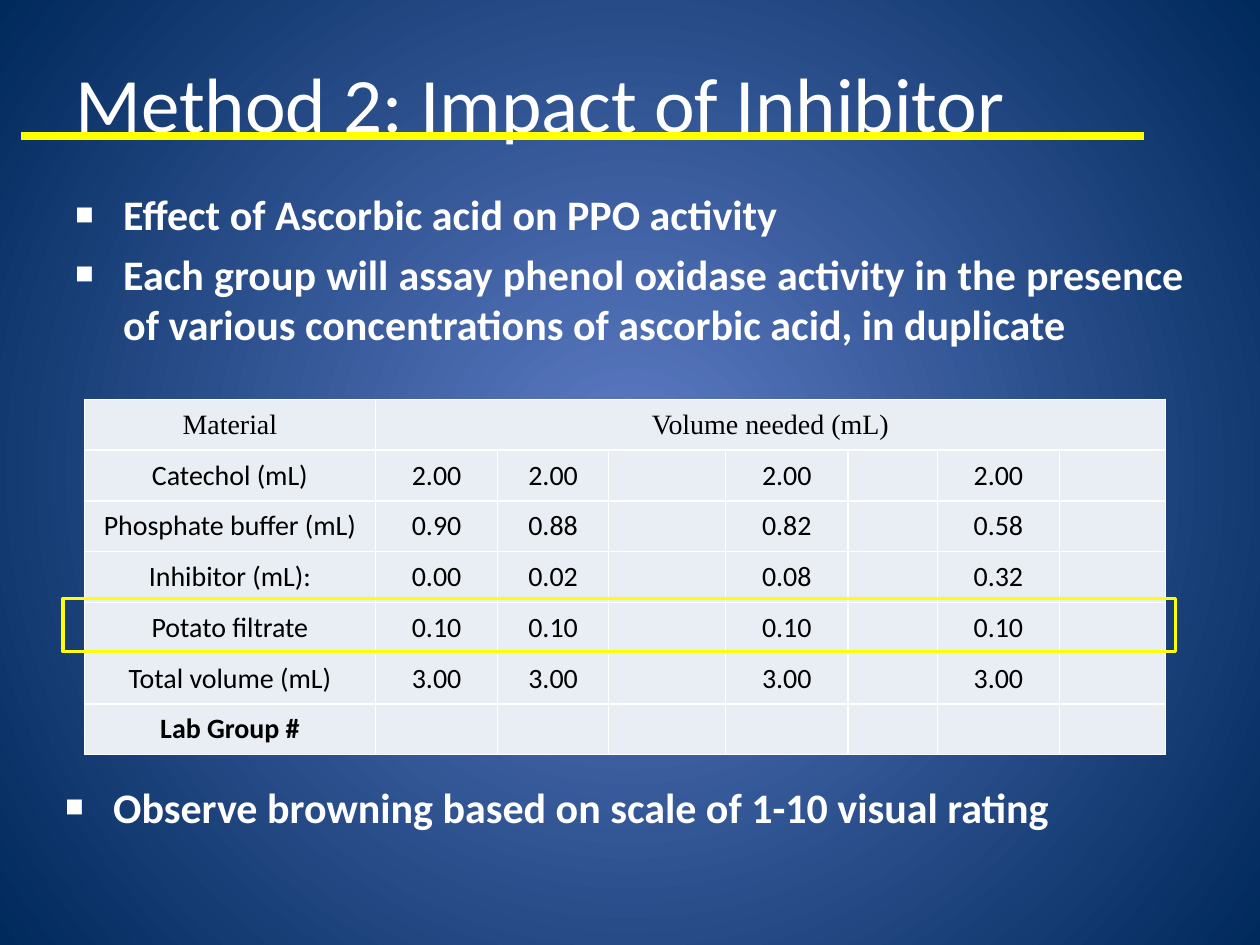
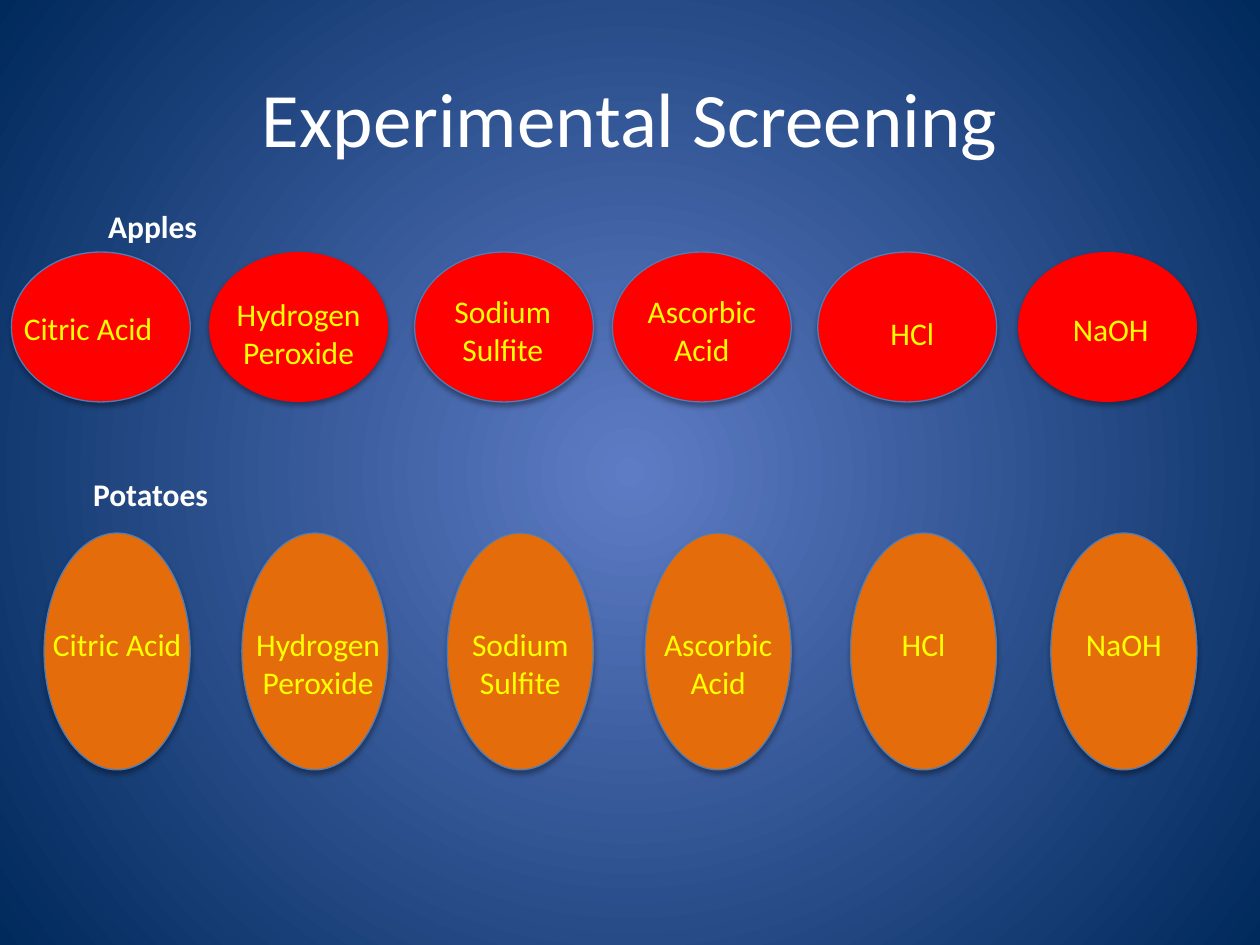
from dataclasses import dataclass

from pptx import Presentation
from pptx.dml.color import RGBColor
from pptx.enum.shapes import MSO_CONNECTOR, MSO_SHAPE
from pptx.enum.text import MSO_ANCHOR, MSO_AUTO_SIZE, PP_ALIGN
from pptx.oxml.ns import qn
from pptx.oxml.xmlchemy import OxmlElement
from pptx.util import Inches, Pt

# Grid: 100 columns by 75 rows of square cells
COLUMNS, ROWS = 100, 75
WIDTH, HEIGHT = Inches(10), Inches(7.5)

# Shared colours and text formats
WHITE, BLACK, YELLOW = "FFFFFF", "000000", "FFFF00"
GLOW, NAVY = "5E7CC5", "00295C"
APPLE_RED, POTATO_ORANGE, OUTLINE_BLUE = "FF0000", "E46C0A", "4B7EBC"
CELL_FILL = "E9EDF4"

TITLE_FONT = {"name": "Calibri", "size": Pt(44)}
BULLET_FONT = {"name": "Calibri", "size": Pt(24), "bold": True}
HEADING_FONT = {"name": "Calibri", "size": Pt(18), "bold": True}
LABEL_FONT = {"name": "Calibri", "size": Pt(18)}
CELL_FONT = {"name": "Calibri", "size": Pt(16)}
HEADER_FONT = {"name": "Times New Roman", "size": Pt(16)}

LEFT_TEXT = {"alignment": PP_ALIGN.LEFT}
CENTRED_TEXT = {"alignment": PP_ALIGN.CENTER}
BULLET_TEXT = {"alignment": PP_ALIGN.JUSTIFY, "level": 1, "space_before": Pt(5)}
TITLE_FRAME = {"word_wrap": True, "vertical_anchor": MSO_ANCHOR.MIDDLE}
BODY_FRAME = {"word_wrap": True, "vertical_anchor": MSO_ANCHOR.TOP}
LABEL_FRAME = BODY_FRAME | {"auto_size": MSO_AUTO_SIZE.SHAPE_TO_FIT_TEXT}
CELL_FORMAT = {"vertical_anchor": MSO_ANCHOR.MIDDLE, "margin_left": 0,
               "margin_right": 0, "margin_top": 0, "margin_bottom": 0}


@dataclass(frozen=True)
class Area:
    """A block of grid cells."""
    column: float
    row: float
    columns: float
    rows: float

    def box(self) -> tuple[int, int, int, int]:
        return across(self.column), down(self.row), across(self.columns), down(self.rows)


@dataclass(frozen=True)
class Treatment:
    """One screened chemical; both of its ovals end at the column `right`."""
    name: str
    right: float
    apple_label_row: float
    apple_nudge: float = 0
    potato_label_columns: float = 11.6
    potato_nudge: float = 0
    apple_outlined: bool = True
    apple_text: PP_ALIGN = PP_ALIGN.CENTER


@dataclass(frozen=True)
class Produce:
    """A row of ovals with its heading."""
    heading: str
    heading_area: Area
    row: float
    columns: float
    rows: float
    fill: str


APPLES = Produce("Apples", Area(7.6, 15.9, 15.1, 4), 20, 14.2, 11.9, APPLE_RED)
POTATOES = Produce("Potatoes", Area(6.4, 37.2, 14.2, 4), 42.3, 11.6, 18.8, POTATO_ORANGE)
POTATO_LABEL_ROW = 49.1
TREATMENTS = [
    Treatment("Citric Acid", 15.1, 24, potato_label_columns=14.5,
              apple_text=PP_ALIGN.LEFT),
    Treatment("Hydrogen Peroxide", 30.8, 22.9, potato_label_columns=15.1,
              potato_nudge=0.25, apple_outlined=False),
    Treatment("Sodium Sulfite", 47.1, 22.7, apple_nudge=-0.1),
    Treatment("Ascorbic Acid", 62.8, 22.7),
    Treatment("HCl", 79.1, 24.4, apple_nudge=0.4),
    Treatment("NaOH", 95, 24.1, apple_nudge=0.25, apple_outlined=False),
]

# Assay mixtures: material, then the control and three inhibitor levels
MIXTURES = [
    ("Catechol (mL)", "2.00", "2.00", "2.00", "2.00"),
    ("Phosphate buffer (mL)", "0.90", "0.88", "0.82", "0.58"),
    ("Inhibitor (mL):", "0.00", "0.02", "0.08", "0.32"),
    ("Potato filtrate", "0.10", "0.10", "0.10", "0.10"),
    ("Total volume (mL)", "3.00", "3.00", "3.00", "3.00"),
    ("Lab Group #", "", "", "", ""),
]
FILLED_COLUMNS = (0, 1, 2, 4, 6)
MIXTURE_COLUMNS = (23.1, 9.7, 8.8, 9.3, 9.7, 7.1, 9.7, 8.4)
MIXTURE_ROW = 4.03


def across(columns: float) -> int:
    return round(WIDTH * columns / COLUMNS)


def down(rows: float) -> int:
    return round(HEIGHT * rows / ROWS)


def colour(code: str) -> RGBColor:
    return RGBColor.from_string(code)


def apply(target, formats: dict) -> None:
    for attribute, value in formats.items():
        setattr(target, attribute, value)


def add_xml(parent, tag: str, **attributes):
    child = OxmlElement(tag)
    for key, value in attributes.items():
        child.set(key, str(value))
    parent.append(child)
    return child


def write(paragraph, text: str, font: dict, ink: str, layout: dict) -> None:
    run = paragraph.add_run()
    run.text = text
    apply(run.font, font)
    run.font.color.rgb = colour(ink)
    apply(paragraph, layout)


def add_text(slide, area: Area, text: str, font: dict, ink: str,
             layout: dict, frame_format: dict) -> None:
    frame = slide.shapes.add_textbox(*area.box()).text_frame
    apply(frame, frame_format)
    write(frame.paragraphs[0], text, font, ink, layout)


def add_bullets(slide, area: Area, points: list[str]) -> None:
    frame = slide.shapes.add_textbox(*area.box()).text_frame
    apply(frame, BODY_FRAME)
    for index, point in enumerate(points):
        paragraph = frame.add_paragraph() if index else frame.paragraphs[0]
        write(paragraph, point, BULLET_FONT, WHITE, BULLET_TEXT)
        properties = paragraph._p.get_or_add_pPr()
        properties.set("marL", str(across(3.8)))
        properties.set("indent", str(-across(3.8)))
        add_xml(add_xml(properties, "a:buClr"), "a:srgbClr", val=WHITE)
        add_xml(properties, "a:buSzPct", val=46000)
        add_xml(properties, "a:buFont", typeface="Calibri")
        add_xml(properties, "a:buChar", char="■")


def add_titled_slide(deck, title: str, row: float, layout: dict):
    """Blank slide with the round glow behind it and the title on top."""
    slide = deck.slides.add_slide(deck.slide_layouts[6])
    fill = slide.background.fill
    fill.gradient()
    for stop, code, position in zip(fill.gradient_stops, (GLOW, NAVY), (0, 1)):
        stop.color.rgb = colour(code)
        stop.position = position
    gradient = slide.element.find(".//" + qn("a:gradFill"))
    gradient.remove(gradient.find(qn("a:lin")))
    centre = dict.fromkeys("ltrb", 50000)
    add_xml(add_xml(gradient, "a:path", path="circle"), "a:fillToRect", **centre)
    add_text(slide, Area(5, row, 90, 12.5), title, TITLE_FONT, WHITE, layout, TITLE_FRAME)
    return slide


def add_title_rule(slide) -> None:
    rule = slide.shapes.add_connector(
        MSO_CONNECTOR.STRAIGHT, across(1.7), down(10.8), across(90.8), down(10.8))
    rule.line.color.rgb = colour(YELLOW)
    rule.line.width = Pt(4.5)
    add_xml(rule.element.spPr, "a:effectLst")


def format_cell(cell) -> None:
    apply(cell, CELL_FORMAT)
    properties = cell._tc.get_or_add_tcPr()
    for side in "LRTB":
        border = add_xml(properties, f"a:ln{side}", w=Pt(1))
        add_xml(add_xml(border, "a:solidFill"), "a:srgbClr", val=WHITE)
    cell.fill.solid()
    cell.fill.fore_color.rgb = colour(CELL_FILL)


def add_mixture_table(slide) -> None:
    rows, columns = len(MIXTURES) + 1, len(MIXTURE_COLUMNS)
    area = Area(6.7, 31.7, sum(MIXTURE_COLUMNS), rows * MIXTURE_ROW)
    table = slide.shapes.add_table(rows, columns, *area.box()).table
    apply(table, {"first_row": False, "horz_banding": False})
    for column, share in zip(table.columns, MIXTURE_COLUMNS):
        column.width = across(share)
    for row in table.rows:
        row.height = down(MIXTURE_ROW)
    for cell in table.iter_cells():
        format_cell(cell)
    table.cell(0, 1).merge(table.cell(0, columns - 1))
    for column, header in enumerate(("Material", "Volume needed (mL)")):
        write(table.cell(0, column).text_frame.paragraphs[0], header,
              HEADER_FONT, BLACK, CENTRED_TEXT)
    for row, mixture in enumerate(MIXTURES, start=1):
        font = CELL_FONT | {"bold": row == len(MIXTURES)}
        for column, entry in zip(FILLED_COLUMNS, mixture):
            if entry:
                write(table.cell(row, column).text_frame.paragraphs[0], entry,
                      font, BLACK, CENTRED_TEXT)


def add_filtrate_frame(slide) -> None:
    frame = slide.shapes.add_shape(MSO_SHAPE.RECTANGLE, *Area(5, 47.5, 88.3, 4.2).box())
    frame.shadow.inherit = False
    frame.fill.background()
    frame.line.color.rgb = colour(YELLOW)
    frame.line.width = Pt(2)


def add_oval(slide, produce: Produce, right: float, outlined: bool) -> None:
    area = Area(right - produce.columns, produce.row, produce.columns, produce.rows)
    oval = slide.shapes.add_shape(MSO_SHAPE.OVAL, *area.box())
    oval.fill.solid()
    oval.fill.fore_color.rgb = colour(produce.fill)
    if outlined:
        oval.line.color.rgb = colour(OUTLINE_BLUE)
        oval.line.width = Pt(0.75)
    else:
        oval.line.fill.background()
    # Soft shadow straight below
    oval.shadow.inherit = False
    effects = oval.element.spPr.find(qn("a:effectLst"))
    shadow = add_xml(effects, "a:outerShdw", blurRad=Pt(3.1), dist=Pt(1.8),
                     dir=90 * 60000, rotWithShape=0)
    add_xml(add_xml(shadow, "a:srgbClr", val=BLACK), "a:alpha", val=35000)


def add_label(slide, treatment: Treatment, centre: float, row: float,
              columns: float, alignment: PP_ALIGN) -> None:
    rows = 7.1 if " " in treatment.name and alignment == PP_ALIGN.CENTER else 4
    add_text(slide, Area(centre - columns / 2, row, columns, rows), treatment.name,
             LABEL_FONT, YELLOW, {"alignment": alignment}, LABEL_FRAME)


def build_inhibitor_slide(deck) -> None:
    slide = add_titled_slide(deck, "Method 2: Impact of Inhibitor", 1.8, LEFT_TEXT)
    add_bullets(slide, Area(5, 14.5, 90, 15.5), [
        "Effect of Ascorbic acid on PPO activity",
        "Each group will assay phenol oxidase activity in the presence of various "
        "concentrations of ascorbic acid, in duplicate",
    ])
    add_title_rule(slide)
    add_mixture_table(slide)
    add_filtrate_frame(slide)
    add_bullets(slide, Area(4.2, 61.5, 90, 5.2),
                ["Observe browning based on scale of 1-10 visual rating"])


def build_screening_slide(deck) -> None:
    slide = add_titled_slide(deck, "Experimental Screening", 3, CENTRED_TEXT)
    for produce in (APPLES, POTATOES):
        add_text(slide, produce.heading_area, produce.heading, HEADING_FONT,
                 WHITE, LEFT_TEXT, LABEL_FRAME)
    for item in TREATMENTS:
        add_oval(slide, APPLES, item.right, item.apple_outlined)
        add_label(slide, item, item.right - APPLES.columns / 2 + item.apple_nudge,
                  item.apple_label_row, APPLES.columns, item.apple_text)
        add_oval(slide, POTATOES, item.right, True)
        add_label(slide, item, item.right - POTATOES.columns / 2 + item.potato_nudge,
                  POTATO_LABEL_ROW, item.potato_label_columns, PP_ALIGN.CENTER)


def main() -> None:
    deck = Presentation()
    apply(deck, {"slide_width": WIDTH, "slide_height": HEIGHT})
    build_inhibitor_slide(deck)
    build_screening_slide(deck)
    deck.save("out.pptx")


if __name__ == "__main__":
    main()
